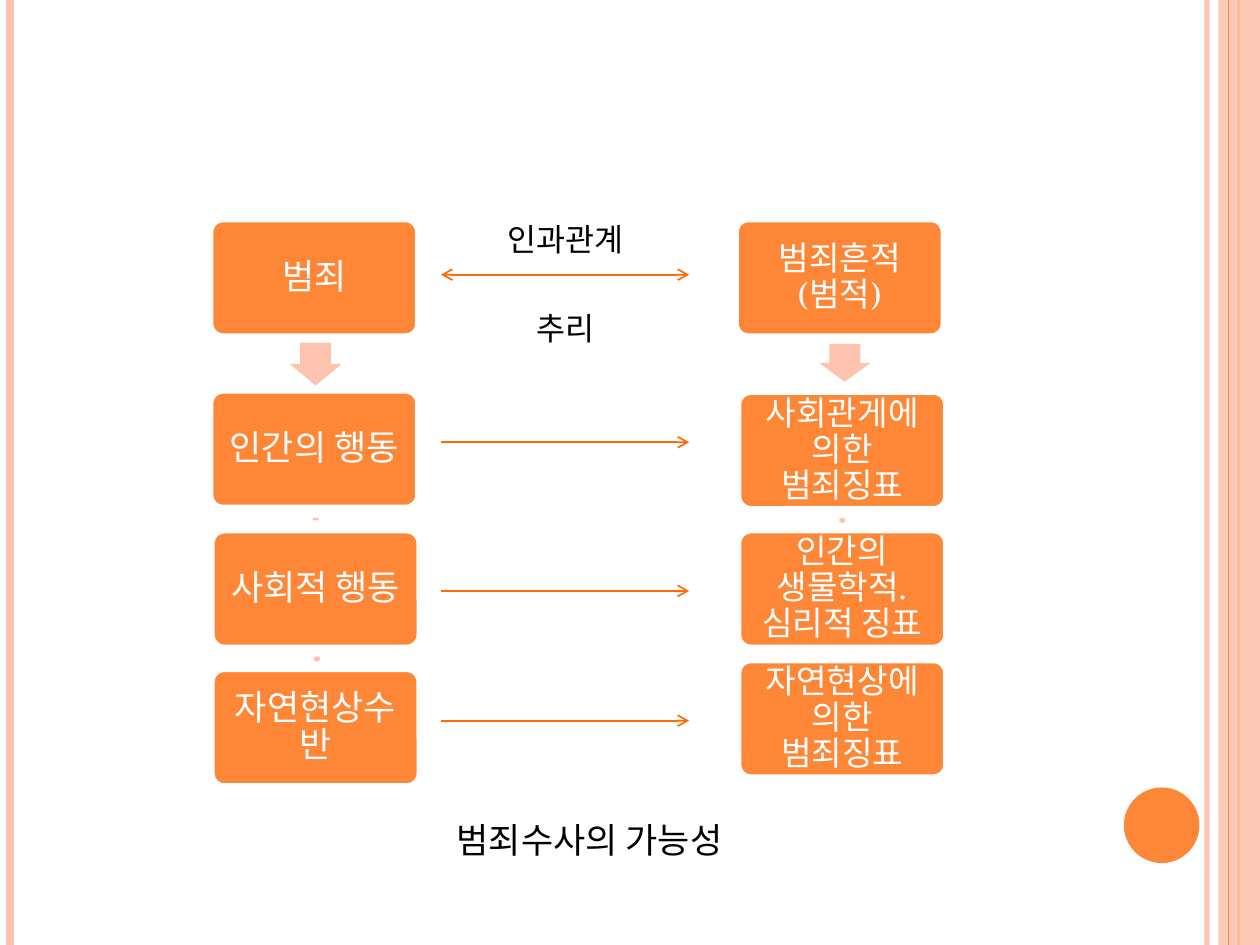
from pptx import Presentation, util as u
from pptx.dml.color import RGBColor
from pptx.enum import shapes, text
from pptx.oxml.ns import qn
from lxml import etree

PX = 9144  # 100 px to the inch
FONT = "TeX Gyre Schola"
ORANGE, PEACH, ARROW = "FE8637", "FEC3AE", "FF6B0A"
WHITE, BLACK = "FFFFFF", "000000"
BOX_W, BOX_H = 163, 91
SHAPE = shapes.MSO_SHAPE

LEFT_STEPS = [(168, 175, "범죄"), (168, 311, "인간의 행동"),
              (169, 422, "사회적 행동"), (169, 532, "자연현상수반")]
RIGHT_STEPS = [(585, 175, "범죄흔적(범적)"), (587, 312, "사회관게에 의한 범죄징표"),
               (587, 422, "인간의 생물학적.심리적 징표"), (587, 525, "자연현상에 의한 범죄징표")]


def px(*values):
    return [u.Emu(v * PX) for v in values]


def rgb(color):
    return RGBColor.from_string(color)


def set_alpha(fill, percent):
    color = fill._xPr.find(".//" + qn("a:srgbClr"))
    etree.SubElement(color, qn("a:alpha"), val=str(percent * 1000))


def add_shape(s, kind, box, color, adjustments=(), outline=None, alpha=None):
    sp = s.shapes.add_shape(kind, *px(*box))
    sp.shadow.inherit = False
    sp.fill.solid()
    sp.fill.fore_color.rgb = rgb(color)
    if alpha:
        set_alpha(sp.fill, alpha)
    for i, value in enumerate(adjustments):
        sp.adjustments[i] = value
    if outline:
        sp.line.color.rgb = rgb(outline)
        sp.line.width = u.Pt(2)
    else:
        sp.line.fill.background()
    return sp


def add_line(s, start, end, color, width, ends=(), alpha=None):
    """Draw a straight line; ends holds headEnd and/or tailEnd for arrowheads."""
    c = s.shapes.add_connector(shapes.MSO_CONNECTOR.STRAIGHT, *px(*start, *end))
    c.line.color.rgb = rgb(color)
    c.line.width = u.Pt(width)
    if alpha:
        set_alpha(c.line.fill, alpha)
    for name in ends:
        etree.SubElement(c.line._get_or_add_ln(), qn("a:" + name), type="arrow")
    etree.SubElement(c._element.spPr, qn("a:effectLst"))


def write(sp, words, size, color, margin=None, spacing=None):
    tf = sp.text_frame
    frame = {"word_wrap": True, "auto_size": text.MSO_AUTO_SIZE.NONE,
             "vertical_anchor": text.MSO_ANCHOR.MIDDLE}
    if margin is not None:
        for side in ("left", "top", "right", "bottom"):
            frame["margin_" + side] = px(margin)[0]
    for name, value in frame.items():
        setattr(tf, name, value)
    p = tf.paragraphs[0]
    p.alignment = text.PP_ALIGN.CENTER
    p.line_spacing = spacing
    r = p.add_run()
    r.text = words
    for name, value in {"name": FONT, "size": u.Pt(size), "bold": False}.items():
        setattr(r.font, name, value)
    r.font.color.rgb = rgb(color)


def add_frame(s, width, height):
    """Draw the stripes along both sides and the disc at the lower right."""
    def stripe(x, color, weight, alpha=None):
        add_line(s, (x, 0), (x, height), color, weight, alpha=alpha)

    stripe(width - 42, PEACH, 3, 93)
    stripe(8, PEACH, 4.5)
    stripe(width - 17, ORANGE, 1.5)
    add_shape(s, SHAPE.RECTANGLE, (width - 33, 0, 33, height), PEACH, alpha=87)
    stripe(width - 25, ORANGE, 0.75)
    add_shape(s, SHAPE.OVAL, (width - 108, height - 125, 60, 60), ORANGE)


def add_column(s, steps, size, arrow, dots):
    """Draw stacked boxes, the arrow below the first and the dots between others."""
    for x, y, words in steps:
        sp = add_shape(s, SHAPE.ROUNDED_RECTANGLE, (x, y, BOX_W, BOX_H),
                       ORANGE, (0.1,), WHITE)
        write(sp, words, size, WHITE, margin=8, spacing=0.9)
    add_shape(s, SHAPE.DOWN_ARROW, arrow, PEACH, (0.6, 0.5))
    for dot in dots:
        add_shape(s, SHAPE.OVAL, dot, PEACH)


def add_links(s, left, right):
    for y in (351, 469, 572):
        add_line(s, (left, y), (right, y), ARROW, 1, ["tailEnd"])
    add_line(s, (left, 218), (right, 218), ARROW, 1, ["headEnd", "tailEnd"])
    for y, words in ((170, "인과관계"), (241, "추리")):
        write(s.shapes.add_textbox(*px(left + 16, y, 165, 39)), words, 18, BLACK)


def add_title(s, box):
    title = s.shapes.title
    for name, value in zip(("left", "top", "width", "height"), px(*box)):
        setattr(title, name, value)
    write(title, "범죄수사의 가능성", 20, BLACK)


def main():
    prs = Presentation()
    prs.slide_width, prs.slide_height = px(1000, 750)
    s = prs.slides.add_slide(prs.slide_layouts[5])
    add_frame(s, 1000, 750)
    add_column(s, LEFT_STEPS, 20, (230, 272, 41, 34),
               [(248, 411, 5, 2), (249, 521, 5, 4)])
    add_column(s, RIGHT_STEPS, 19, (650, 273, 41, 30), [(666, 411, 5, 4)])
    add_links(s, 350, 547)
    add_title(s, (232, 627, 472, 79))
    prs.save("out.pptx")


if __name__ == "__main__":
    main()
